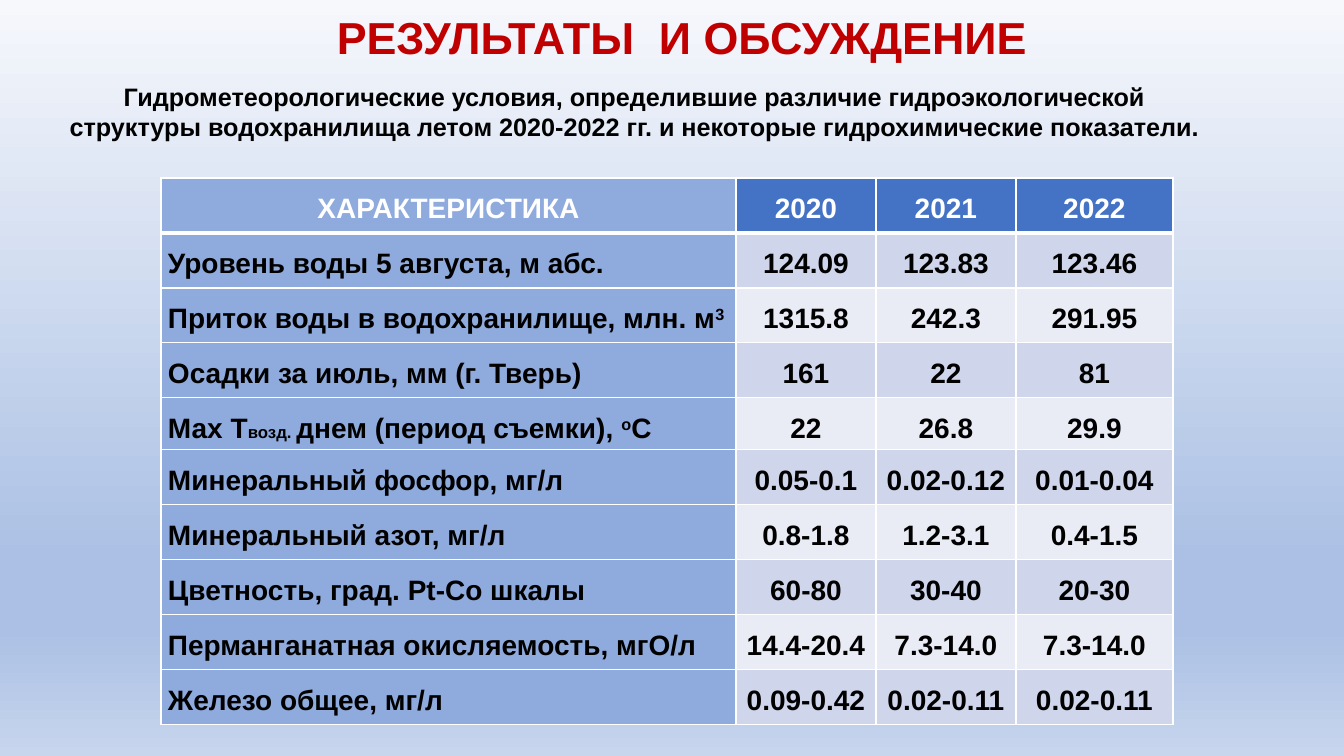
from copy import deepcopy

from lxml.etree import SubElement
from pptx import Presentation
from pptx.dml.color import RGBColor
from pptx.enum.text import MSO_ANCHOR, PP_ALIGN
from pptx.oxml.ns import qn
from pptx.util import Pt

EMU_PER_PX = 914400 / 100.8
COLORS = {
    "title": "C00000", "text": "000000", "white": "FFFFFF",
    "label": "8FAADC", "header": "4472C4", "odd": "CFD5EA", "even": "E9EBF5",
}
BACKGROUND_STOPS = [(0, "F6F8FC"), (0.74, "ABC0E4"), (0.83, "ABC0E4"), (1, "C7D5ED")]
TITLE = "РЕЗУЛЬТАТЫ  И ОБСУЖДЕНИЕ"
SUBTITLE = (
    "Гидрометеорологические условия, определившие различие гидроэкологической "
    "структуры водохранилища летом 2020-2022 гг. и некоторые гидрохимические показатели."
)
COLUMN_WIDTHS = [575, 140, 140, 157]
ROW_HEIGHTS = [55] * 4 + [52] + [55] * 5
INFLOW = [("Приток воды в водохранилище, млн. м", 20, 0), ("3", 20, 30)]
AIR_TEMPERATURE = [
    ("Маx T", 20, 0), ("возд. ", 12, 0), ("днем (период съемки), ", 20, 0),
    ("о", 20, 30), ("С", 20, 0),
]
ROWS = [
    ["ХАРАКТЕРИСТИКА", "2020", "2021", "2022"],
    ["Уровень воды 5 августа, м абс.", "124.09", "123.83", "123.46"],
    [INFLOW, "1315.8", "242.3", "291.95"],
    ["Осадки за июль, мм (г. Тверь)", "161", "22", "81"],
    [AIR_TEMPERATURE, "22", "26.8", "29.9"],
    ["Минеральный фосфор, мг/л", "0.05-0.1", "0.02-0.12", "0.01-0.04"],
    ["Минеральный азот, мг/л", "0.8-1.8", "1.2-3.1", "0.4-1.5"],
    ["Цветность, град. Pt-Co шкалы", "60-80", "30-40", "20-30"],
    ["Перманганатная окисляемость, мгО/л", "14.4-20.4", "7.3-14.0", "7.3-14.0"],
    ["Железо общее, мг/л", "0.09-0.42", "0.02-0.11", "0.02-0.11"],
]


def px(length):
    return round(length * EMU_PER_PX)


def apply(target, values):
    for name, value in values.items():
        setattr(target, name, value)


def write(frame, runs, color, paragraph_format):
    paragraph = frame.paragraphs[0]
    apply(paragraph, paragraph_format)
    for text, size, baseline in runs:
        run = paragraph.add_run()
        run.text = text
        apply(run.font, {"name": "Arial", "size": Pt(size), "bold": True})
        run.font.color.rgb = RGBColor.from_string(COLORS[color])
        if baseline:
            run.font._element.set("baseline", str(baseline * 1000))


def paint_background(slide):
    fill = slide.background.fill
    fill.gradient()
    fill.gradient_angle = 270
    stop_list = slide._element.find(".//" + qn("a:gsLst"))
    while len(stop_list) < len(BACKGROUND_STOPS):
        stop_list.append(deepcopy(stop_list[0]))
    for stop, (position, color) in zip(fill.gradient_stops, BACKGROUND_STOPS):
        stop.position = position
        stop.color.rgb = RGBColor.from_string(color)


def place_title(slide, box):
    title = slide.shapes.title
    apply(title, dict(zip(("left", "top", "width", "height"), map(px, box))))
    apply(title.text_frame, {"word_wrap": True, "vertical_anchor": MSO_ANCHOR.MIDDLE})
    write(title.text_frame, [(TITLE, 32, 0)], "title",
          {"alignment": PP_ALIGN.CENTER, "line_spacing": 0.9})


def place_subtitle(slide, box):
    frame = slide.shapes.add_textbox(*map(px, box)).text_frame
    frame.word_wrap = True
    write(frame, [(SUBTITLE, 18, 0)], "text", {"alignment": PP_ALIGN.CENTER})


def add_borders(cell, widths):
    properties = cell._tc.get_or_add_tcPr()
    for side, width in widths.items():
        line = SubElement(properties, qn(f"a:ln{side}"), w=str(Pt(width)))
        solid = SubElement(line, qn("a:solidFill"))
        SubElement(solid, qn("a:srgbClr"), val=COLORS["white"])


def fill_cell(cell, content, row, column):
    runs = [(content, 20, 0)] if isinstance(content, str) else content
    apply(cell, {"margin_left": px(7), "margin_right": px(7),
                 "margin_top": 0, "margin_bottom": 0})
    is_label = row > 0 and column == 0
    write(cell.text_frame, runs, "text" if row else "white", {
        "alignment": PP_ALIGN.JUSTIFY if is_label else PP_ALIGN.CENTER,
        "line_spacing": 1.5, "space_after": Pt(8),
    })
    add_borders(cell, {"L": 1, "R": 1, "T": 3 if row == 1 else 1, "B": 1 if row else 3})
    if column == 0:
        color = "label"
    elif row == 0:
        color = "header"
    else:
        color = "odd" if row % 2 else "even"
    cell.fill.solid()
    cell.fill.fore_color.rgb = RGBColor.from_string(COLORS[color])


def place_table(slide, left, top):
    box = (left, top, sum(COLUMN_WIDTHS), sum(ROW_HEIGHTS))
    table = slide.shapes.add_table(len(ROWS), len(COLUMN_WIDTHS), *map(px, box)).table
    for column, width in zip(table.columns, COLUMN_WIDTHS):
        column.width = px(width)
    for row, height in zip(table.rows, ROW_HEIGHTS):
        row.height = px(height)
    for row, contents in enumerate(ROWS):
        for column, content in enumerate(contents):
            fill_cell(table.cell(row, column), content, row, column)


def main():
    presentation = Presentation()
    apply(presentation, {"slide_width": px(1344), "slide_height": px(756)})
    slide = presentation.slides.add_slide(presentation.slide_layouts[5])
    paint_background(slide)
    place_title(slide, (295, 4, 774, 72))
    place_subtitle(slide, (47, 76, 1175, 72))
    place_table(slide, 161, 178)
    presentation.save("out.pptx")


if __name__ == "__main__":
    main()
